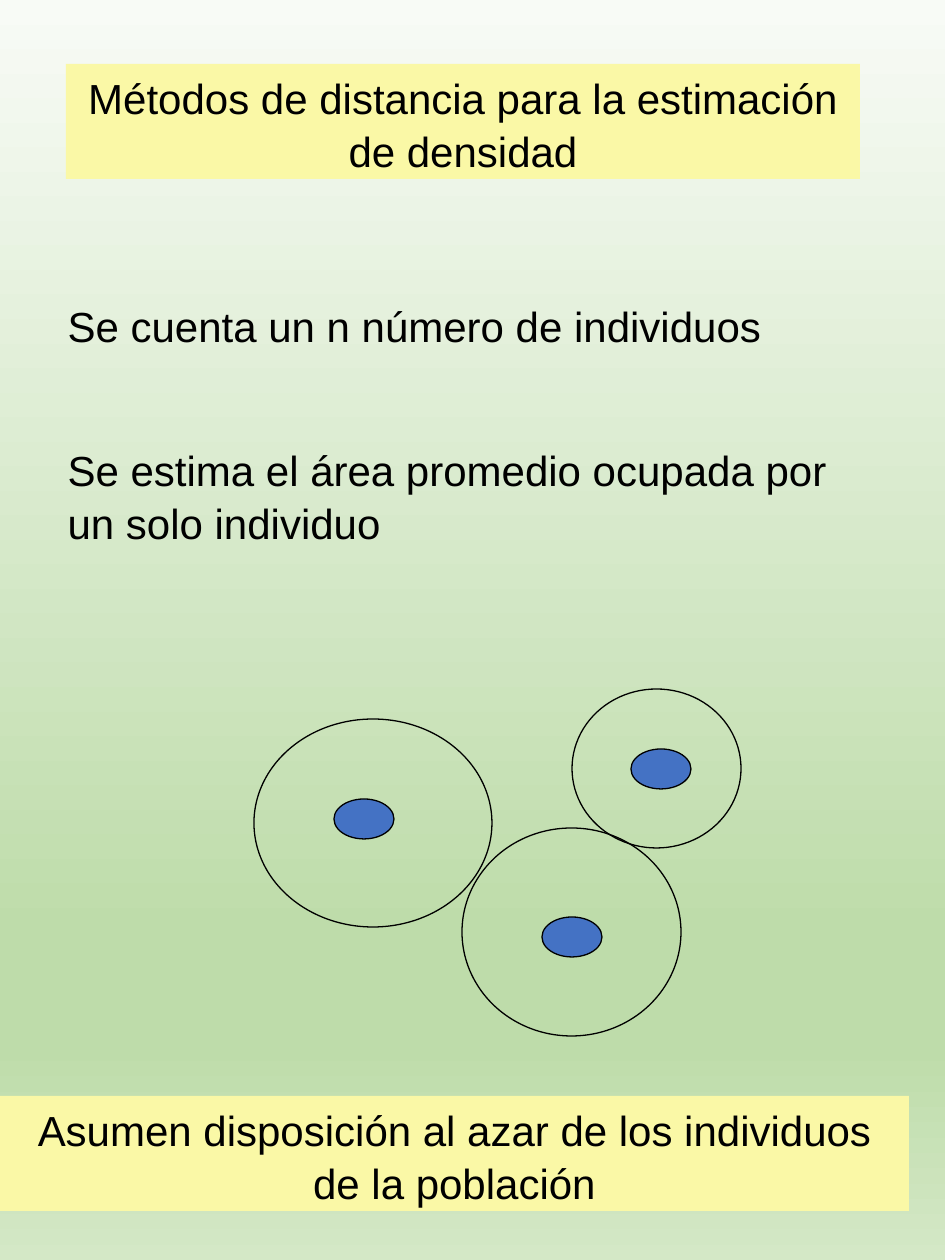
from dataclasses import dataclass

import pptx
import pptx.dml.color
import pptx.enum.shapes
import pptx.enum.text
import pptx.oxml
import pptx.oxml.ns
import pptx.util
from lxml import etree

EMU_PER_PX = 914400 / 126


@dataclass(frozen=True)
class Theme:
    font: str = "Arial"
    size: int = 24
    line_spacing: float = 1.05
    paragraph_gap: int = 52
    outline_width: float = 0.75
    text: str = "000000"
    banner: str = "FAF8A6"
    individual: str = "4472C4"
    # Background stops: position in percent, colour
    background: tuple = ((0, "F8FBF6"), (74, "BEDCAA"), (83, "BEDCAA"), (100, "D4E8C6"))


THEME = Theme()
ALIGN = pptx.enum.text.PP_ALIGN
SHAPES = pptx.enum.shapes.MSO_SHAPE


def px(length):
    return pptx.util.Emu(round(length * EMU_PER_PX))


def color(value):
    return pptx.dml.color.RGBColor.from_string(value)


def place(shape, left, top, width, height):
    shape.left, shape.top = px(left), px(top)
    shape.width, shape.height = px(width), px(height)


def paint_background(page):
    fill = page.background.fill
    fill.gradient()
    gradient = page.background._cSld.bg.bgPr.find(pptx.oxml.ns.qn("a:gradFill"))
    for child in list(gradient):
        gradient.remove(child)
    stops = etree.SubElement(gradient, pptx.oxml.ns.qn("a:gsLst"))
    for position, value in THEME.background:
        stop = etree.SubElement(stops, pptx.oxml.ns.qn("a:gs"), pos=str(position * 1000))
        etree.SubElement(stop, pptx.oxml.ns.qn("a:srgbClr"), val=value)
    etree.SubElement(gradient, pptx.oxml.ns.qn("a:lin"), ang="5400000", scaled="0")


def write(shape, paragraphs, align):
    frame = shape.text_frame
    frame.text = "\n".join(paragraphs)
    frame.word_wrap = True
    frame.auto_size = pptx.enum.text.MSO_AUTO_SIZE.NONE
    frame.vertical_anchor = pptx.enum.text.MSO_ANCHOR.TOP
    for index, para in enumerate(frame.paragraphs):
        para.alignment = align
        para.line_spacing = THEME.line_spacing
        para.space_before = pptx.util.Pt(THEME.paragraph_gap if index else 0)
        para.font.name = THEME.font
        para.font.size = pptx.util.Pt(THEME.size)
        para.font.color.rgb = color(THEME.text)


def remove_bullets(shape):
    for para in shape.text_frame.paragraphs:
        properties = para._p.get_or_add_pPr()
        properties.set("marL", "0")
        properties.set("indent", "0")
        no_bullet = pptx.oxml.parse_xml(
            f"<a:buNone {pptx.oxml.ns.nsdecls('a')}/>")
        properties.find(pptx.oxml.ns.qn("a:spcBef")).addnext(no_bullet)


def format_banner(shape, text):
    shape.fill.solid()
    shape.fill.fore_color.rgb = color(THEME.banner)
    shape.line.fill.background()
    write(shape, [text], ALIGN.CENTER)


def add_ellipse(page, left, top, width, height, fill=None):
    ellipse = page.shapes.add_shape(
        SHAPES.OVAL, px(left), px(top), px(width), px(height))
    ellipse.shadow.inherit = False
    if fill:
        ellipse.fill.solid()
        ellipse.fill.fore_color.rgb = color(fill)
    else:
        ellipse.fill.background()
    ellipse.line.color.rgb = color(THEME.text)
    ellipse.line.width = pptx.util.Pt(THEME.outline_width)


def main():
    deck = pptx.Presentation()
    deck.slide_width, deck.slide_height = px(945), px(1260)
    page = deck.slides.add_slide(deck.slide_layouts[1])
    paint_background(page)

    # Title
    title = page.shapes.title
    place(title, 66, 64, 794, 115)
    format_banner(title, "Métodos de distancia para la estimación de densidad")

    # Steps of the method
    body = page.placeholders[1]
    place(body, 55, 292, 794, 267)
    write(body, ["Se cuenta un n número de individuos",
                 "Se estima el área promedio ocupada por un solo individuo"], ALIGN.LEFT)
    remove_bullets(body)

    # Individuals, then the area that each one occupies
    for left, top in ((334, 799), (542, 917), (631, 749)):
        add_ellipse(page, left, top, 60, 40, THEME.individual)
    for area in ((254, 719, 238, 208), (462, 828, 219, 208), (572, 689, 169, 159)):
        add_ellipse(page, *area)

    # Assumption
    assumption = page.shapes.add_shape(SHAPES.RECTANGLE, 0, px(1096), px(909), px(115))
    assumption.shadow.inherit = False
    format_banner(assumption, "Asumen disposición al azar de los individuos de la población")

    deck.save("out.pptx")


if __name__ == "__main__":
    main()
